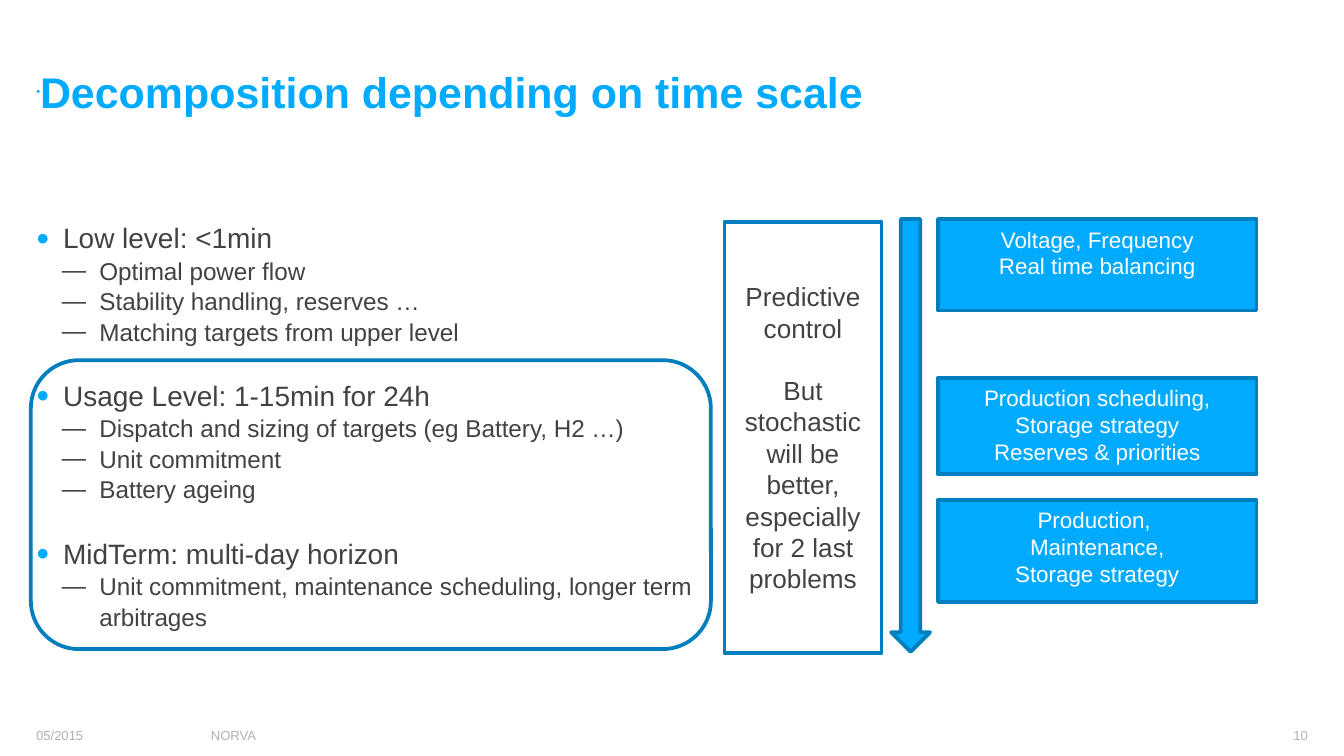
from lxml import etree
from pptx import Presentation
from pptx.dml.color import RGBColor
from pptx.enum.shapes import MSO_SHAPE
from pptx.enum.text import MSO_ANCHOR, PP_ALIGN
from pptx.oxml.ns import qn
from pptx.util import Inches, Pt

RECTANGLE = MSO_SHAPE.RECTANGLE
ROUNDED = MSO_SHAPE.ROUNDED_RECTANGLE
DOWN_ARROW = MSO_SHAPE.DOWN_ARROW
TOP, MIDDLE = MSO_ANCHOR.TOP, MSO_ANCHOR.MIDDLE
LEFT, CENTER, RIGHT = PP_ALIGN.LEFT, PP_ALIGN.CENTER, PP_ALIGN.RIGHT

FONT = "Arial"
COLORS = {
    "blue": "00AAFF",
    "outline": "007EBD",
    "text": "424242",
    "footer": "B1B1B1",
    "white": "FFFFFF",
}
LEVELS = [
    ("Low level: <1min", [
        "Optimal power flow",
        "Stability handling, reserves …",
        "Matching targets from upper level",
    ]),
    ("Usage Level: 1-15min for 24h", [
        "Dispatch and sizing of targets (eg Battery, H2 …)",
        "Unit commitment",
        "Battery ageing",
    ]),
    ("MidTerm: multi-day horizon", [
        "Unit commitment, maintenance scheduling, longer term arbitrages",
    ]),
]
GOALS = [
    (0, 0.68, ["Voltage, Frequency", "Real time balancing"]),
    (1.18, 0.72, ["Production scheduling,", "Storage strategy", "Reserves & priorities"]),
    (2.09, 0.76, ["Production, ", "Maintenance,", "Storage strategy"]),
]


def rgb(name):
    """Return the palette colour of that name."""
    return RGBColor.from_string(COLORS[name])


def add_text_frame(slide, box, top_inset=0, anchor=TOP):
    """Add a wrapping text box and return its frame."""
    frame = slide.shapes.add_textbox(*map(Inches, box)).text_frame
    frame.word_wrap = True
    frame.margin_left = frame.margin_right = frame.margin_bottom = 0
    frame.margin_top = Inches(top_inset)
    frame.vertical_anchor = anchor
    return frame


def add_paragraph(frame, text, size, color, align=LEFT, bold=False):
    """Write one paragraph, reusing the first one while it is empty."""
    first = frame.paragraphs[0]
    paragraph = frame.add_paragraph() if first.runs else first
    paragraph.alignment = align
    run = paragraph.add_run()
    run.text = text
    run.font.name = FONT
    run.font.size = Pt(size)
    run.font.bold = bold
    run.font.color.rgb = rgb(color)
    return paragraph


def set_bullet(paragraph, character, color, percent=100, left=0, hanging=0):
    """Give a paragraph a coloured bullet and a hanging indent."""
    properties = paragraph._p.get_or_add_pPr()
    properties.set("marL", str(Inches(left)))
    properties.set("indent", str(-Inches(hanging)))
    bullet_color = etree.SubElement(properties, qn("a:buClr"))
    etree.SubElement(bullet_color, qn("a:srgbClr"), val=COLORS[color])
    etree.SubElement(properties, qn("a:buSzPct"), val=str(percent * 1000))
    etree.SubElement(properties, qn("a:buFont"), typeface=FONT)
    etree.SubElement(properties, qn("a:buChar"), char=character)


def add_outlined(slide, kind, box, fill=None):
    """Add a shape with the common outline and an optional fill."""
    shape = slide.shapes.add_shape(kind, *map(Inches, box))
    shape.shadow.inherit = False
    shape.line.color.rgb = rgb("outline")
    shape.line.width = Pt(2)
    if fill:
        shape.fill.solid()
        shape.fill.fore_color.rgb = rgb(fill)
    else:
        shape.fill.background()
    return shape


def add_title(slide, box):
    """Add the slide title with its tiny bullet."""
    frame = add_text_frame(slide, box, anchor=MIDDLE)
    title = "Decomposition depending on time scale"
    paragraph = add_paragraph(frame, title, 23, "blue", bold=True)
    paragraph.line_spacing = 0.9
    set_bullet(paragraph, "•", "blue", 25)


def add_levels(slide, box):
    """Add the bulleted list of time scales."""
    frame = add_text_frame(slide, box)
    for index, (heading, details) in enumerate(LEVELS):
        paragraph = add_paragraph(frame, heading, 15, "text")
        paragraph.line_spacing = 1.05
        if index:
            paragraph.space_before = Pt(16.5)
        set_bullet(paragraph, "●", "blue", 80, 0.2, 0.2)
        for detail in details:
            paragraph = add_paragraph(frame, detail, 13, "text")
            paragraph.level = 1
            paragraph.line_spacing = 1.05
            set_bullet(paragraph, "—", "text", 100, 0.47, 0.28)


def add_goals(slide, left, top, width):
    """Add the stacked boxes of goals, one for each time scale."""
    for offset, height, lines in GOALS:
        shape = add_outlined(slide, RECTANGLE, (left, top + offset, width, height), "blue")
        shape.text_frame.vertical_anchor = TOP
        for line in lines:
            add_paragraph(shape.text_frame, line, 12, "white", CENTER)


def add_control(slide, box):
    """Add the box about predictive control."""
    frame = add_outlined(slide, RECTANGLE, box, "white").text_frame
    frame.word_wrap = True
    frame.vertical_anchor = MIDDLE
    add_paragraph(frame, "Predictive control", 14, "text", CENTER)
    remark = "But stochastic will be better, especially for 2 last problems"
    add_paragraph(frame, remark, 14, "text", CENTER).space_before = Pt(16.5)


def add_footer(slide, top, height):
    """Add date, organisation and slide number."""
    for left, width, text, align in (
        (0.27, 1.26, "05/2015", LEFT),
        (1.57, 7.44, "NORVA", LEFT),
        (9.02, 0.71, "10", RIGHT),
    ):
        frame = add_text_frame(slide, (left, top, width, height), 0.06)
        add_paragraph(frame, text, 7, "footer", align)


def main():
    """Build and save the slide."""
    presentation = Presentation()
    presentation.slide_width = Inches(10)
    presentation.slide_height = Inches(10 * 9 / 16)
    slide = presentation.slides.add_slide(presentation.slide_layouts[6])
    add_levels(slide, (0.27, 1.63, 5.06, 3.32))
    add_title(slide, (0.27, 0.33, 9.45, 0.75))
    add_footer(slide, 5.35, 0.27)
    add_outlined(slide, DOWN_ARROW, (6.63, 1.63, 0.29, 3.22), "blue")
    add_goals(slide, 6.98, 1.63, 2.37)
    add_control(slide, (5.39, 1.65, 1.17, 3.21))
    add_outlined(slide, ROUNDED, (0.23, 2.68, 5.06, 2.15))
    presentation.save("out.pptx")


if __name__ == "__main__":
    main()
